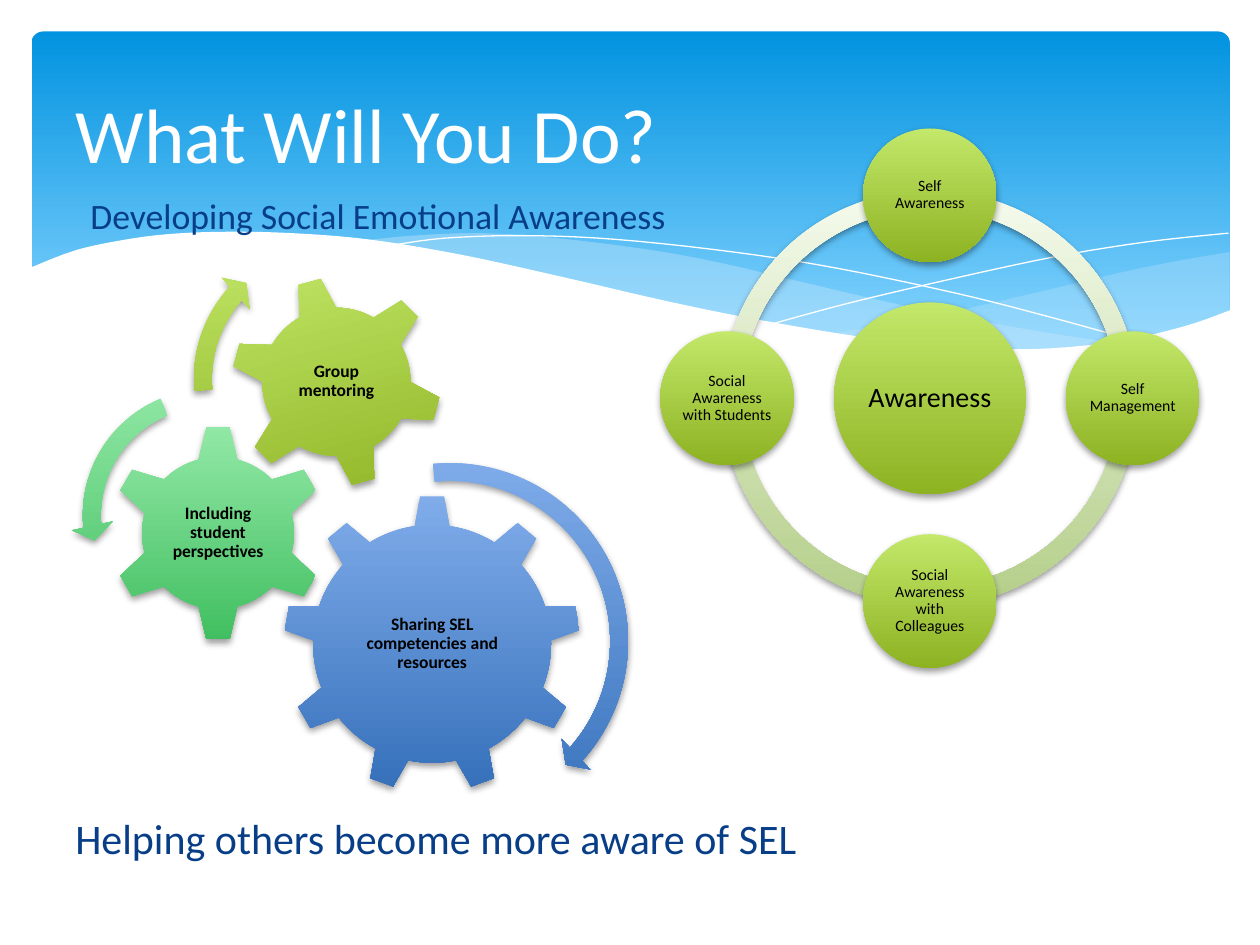
from lxml import etree
from pptx import Presentation, util as u
from pptx.dml.color import RGBColor
from pptx.enum import shapes, text
from pptx.oxml.ns import qn

COLUMNS, ROWS = 100, 75
WHITE, BLACK, NAVY, MIST = "FFFFFF", "000000", "073E87", "C6E7FC"
SKY = ("0293E0", "83D3FE")
LIME = ("C3E86A", "8DB222")
GREEN = ("92E8A6", "41BF60")
BLUE = ("80ACEA", "3570BA")
PALE = ("F5FBED", "B4CE89")
KIND = shapes.MSO_SHAPE
ALIGN = text.PP_ALIGN


def colour(value):
    return RGBColor.from_string(value)


def spline(points, steps=5):
    """Catmull-Rom curve through the points."""
    padded = [points[0], *points, points[-1]]
    curve = [points[0]]
    for a, b, c, d in zip(padded, padded[1:], padded[2:], padded[3:]):
        for step in range(1, steps + 1):
            t = step / steps
            curve.append(tuple(
                (2 * q + (r - p) * t + (2 * p - 5 * q + 4 * r - s) * t ** 2
                 + (3 * q - p - 3 * r + s) * t ** 3) / 2
                for p, q, r, s in zip(a, b, c, d)))
    return curve


class SlideBuilder:
    """Places elements on a grid of COLUMNS by ROWS."""

    def __init__(self, presentation, font="Calibri"):
        self.font = font
        self.column = presentation.slide_width / COLUMNS
        self.row = presentation.slide_height / ROWS
        self.slide = presentation.slides.add_slide(presentation.slide_layouts[3])
        self.shapes = self.slide.shapes

    def box(self, left, top, width, height):
        return [round(value * unit) for value, unit in zip(
            (left, top, width, height), (self.column, self.row) * 2)]

    def set_text(self, shape, words, size, ink=BLACK, align=ALIGN.CENTER,
                 bold=False, inset=0.01, spacing=0.9):
        frame = shape.text_frame
        frame.text = words
        margins = {f"margin_{side}": u.Inches(inset) for side in ("left", "right")}
        margins |= {f"margin_{side}": u.Inches(inset / 2) for side in ("top", "bottom")}
        paragraph = frame.paragraphs[0]
        properties = paragraph._p.get_or_add_pPr()
        properties.set("marL", "0")
        properties.set("indent", "0")
        etree.SubElement(properties, qn("a:buNone"))
        formats = (
            (frame, {"word_wrap": True, "auto_size": text.MSO_AUTO_SIZE.NONE,
                     "vertical_anchor": text.MSO_ANCHOR.MIDDLE, **margins}),
            (paragraph, {"alignment": align, "line_spacing": spacing,
                         "space_before": u.Pt(0)}),
            (paragraph.runs[0].font, {"name": self.font, "size": u.Pt(size),
                                      "bold": bold}),
        )
        for target, values in formats:
            for name, value in values.items():
                setattr(target, name, value)
        paragraph.runs[0].font.color.rgb = colour(ink)

    def placeholder(self, index, place, words, size, ink, align=ALIGN.CENTER):
        shape = self.shapes.placeholders[index]
        shape.left, shape.top, shape.width, shape.height = self.box(*place)
        self.set_text(shape, words, size, ink, align, inset=0.1, spacing=1.0)
        self.shapes._spTree.append(shape._element)  # in front of the background

    def shade(self, shape):
        effects = shape._element.spPr.find(qn("a:effectLst"))
        shadow = etree.SubElement(effects, qn("a:outerShdw"), blurRad=str(u.Pt(4)),
                                  dist=str(u.Pt(2)), dir="5400000", rotWithShape="0")
        black = etree.SubElement(shadow, qn("a:srgbClr"), val=BLACK)
        etree.SubElement(black, qn("a:alpha"), val="38000")

    def preset(self, kind, place, gradient, adjust=(), end=1.0, shadow=True, turn=0):
        shape = self.shapes.add_shape(kind, *self.box(*place))
        for index, value in enumerate(adjust):
            shape.adjustments[index] = value
        shape.rotation = turn
        shape.line.fill.background()
        shape.fill.gradient()
        shape.fill.gradient_angle = 270
        for stop, position, value in zip(shape.fill.gradient_stops, (0, end), gradient):
            stop.position = position
            stop.color.rgb = colour(value)
        shape.shadow.inherit = False
        if shadow:
            self.shade(shape)
        return shape

    def centred(self, kind, centre, size, gradient, **options):
        x, y = centre
        return self.preset(kind, (x - size / 2, y - size / 2, size, size),
                           gradient, **options)

    def label(self, centre, width, height, words):
        x, y = centre
        shape = self.shapes.add_textbox(
            *self.box(x - width / 2, y - height / 2, width, height))
        self.set_text(shape, words, 10, bold=True)

    def outline(self, points, fill=None, opacity=100):
        """Filled area, or a white hairline when there is no fill."""
        corners = [(x * self.column, y * self.row) for x, y in points]
        builder = self.shapes.build_freeform(*corners[0])
        builder.add_line_segments(corners[1:], close=bool(fill))
        shape = builder.convert_to_shape()
        shape.shadow.inherit = False
        if fill:
            shape.line.fill.background()
            shape.fill.solid()
            shape.fill.fore_color.rgb = colour(fill)
            if opacity < 100:
                tone = shape._element.spPr.find(".//" + qn("a:srgbClr"))
                etree.SubElement(tone, qn("a:alpha"), val=str(opacity * 1000))
        else:
            shape.fill.background()
            shape.line.color.rgb = colour(WHITE)
            shape.line.width = u.Pt(0)


def draw_header(page):
    page.preset(KIND.ROUNDED_RECTANGLE, (2.5, 2.5, 95.1, 27), SKY,
                adjust=[0.034], end=0.9, shadow=False)
    right_top = [(97.6, 20), (93.5, 20.7), (89.1, 21.6), (83.2, 23),
                 (75.3, 24.8), (66.1, 26.5)]
    right_bottom = [(66.1, 26.5), (71.9, 27.2), (78.1, 27.7), (83.5, 27.7),
                    (88.1, 27.3), (92.1, 26.5), (94.9, 25.7), (97.6, 24.7)]
    page.outline(spline(right_top) + spline(right_bottom), MIST, 29)
    middle_top = [(89.3, 27.3), (83.7, 26.5), (77.5, 25.4), (70.6, 24),
                  (62.9, 22.2), (56.9, 20.8), (51.4, 19.8), (44.2, 18.9),
                  (38, 18.5), (32.8, 18.7), (28.6, 19.1)]
    middle_bottom = [(28.6, 19.1), (36.2, 20.3), (44.9, 22.2), (56.6, 24.8),
                     (65, 26.4), (72.2, 27.4), (78.5, 27.8), (83.8, 27.8),
                     (89.3, 27.3)]
    page.outline(spline(middle_top) + spline(middle_bottom), MIST, 40)
    page.outline(spline([(30.9, 19.5), (35.3, 18.9), (41.6, 18.7), (48.9, 19),
                         (58.2, 20), (66.5, 21.3), (76, 23.3), (83.1, 25.1),
                         (90.7, 27.2)]))
    page.outline(spline([(61.3, 25.7), (67.2, 24.1), (74.8, 22.3), (83.6, 20.4),
                         (91, 19.2), (97.5, 18.5)]))
    page.outline(spline([(97.7, 24.6), (94, 25.9), (88.7, 27.1), (82.3, 27.7),
                         (76.1, 27.5), (68.8, 26.8), (60.3, 25.4), (52.9, 23.9),
                         (44.7, 22), (36.5, 20.2), (29.2, 19), (23, 18.5),
                         (17.7, 18.4), (13.2, 18.6), (9.5, 19.1), (5.9, 19.9),
                         (2.3, 21.3)]) + [(2.3, 32.9), (97.7, 32.9)], WHITE)


def draw_cycle(page):
    x, y, radius = 73.8, 31.6, 16.1
    half, quarter = 108, 54
    for start in (half, quarter, 0, half + quarter):
        page.centred(KIND.BLOCK_ARC, (x, y), 33, PALE,
                     adjust=[start, (start + quarter) % (2 * half), 0.046])
    hub = page.centred(KIND.OVAL, (x, y), 15.2, LIME)
    page.set_text(hub, "Awareness", 16, inset=0.02)
    for across, down, words in ((0, -1, "Self Awareness"),
                                (1, 0, "Self Management"),
                                (0, 1, "Social Awareness with Colleagues"),
                                (-1, 0, "Social Awareness with Students")):
        circle = page.centred(KIND.OVAL, (x + across * radius, y + down * radius),
                              10.6, LIME)
        page.set_text(circle, words, 9)


def draw_gears(page):
    gears = (
        (KIND.GEAR_9, (34.3, 51.1), 23.6, BLUE, 0, 14.1, 12.1,
         "Sharing SEL competencies and resources"),
        (KIND.GEAR_6, (17.3, 42.3), 17.2, GREEN, 0, 8.5, 8.5,
         "Including student perspectives"),
        (KIND.GEAR_6, (26.7, 30.3), 16.8, LIME, 345, 9.4, 9.4, "Group mentoring"),
    )
    for kind, centre, size, gradient, turn, width, height, words in gears:
        page.centred(kind, centre, size, gradient, turn=turn)
        page.label(centre, width, height, words)
    arrows = (
        (KIND.CIRCULAR_ARROW, (35.7, 50.9), 30.2, BLUE,
         [0.047, 2.99, 25.09, 158.76, 0.055]),
        (KIND.LEFT_CIRCULAR_ARROW, (16.6, 40.9), 21.9, GREEN,
         [0.065, 4.3, 104.89, 148.38, 0.075]),
        (KIND.CIRCULAR_ARROW, (26.3, 30.1), 23.7, LIME,
         [0.06, 3.94, 133.14, 105.08, 0.07]),
    )
    for kind, centre, size, gradient, adjust in arrows:
        page.centred(kind, centre, size, gradient, adjust=adjust)


def main():
    presentation = Presentation()
    presentation.slide_width, presentation.slide_height = u.Inches(10), u.Inches(7.5)
    page = SlideBuilder(presentation)
    draw_header(page)
    page.placeholder(0, (5, 3.7, 90, 13.7), "What Will You Do?", 44, WHITE, ALIGN.LEFT)
    page.placeholder(1, (5, 14.2, 50, 5.8), "Developing Social Emotional Awareness",
                     20.4, NAVY)
    draw_cycle(page)
    page.placeholder(2, (0, 62.9, 69.2, 7.1), "Helping others become more aware of SEL",
                     24, NAVY)
    draw_gears(page)
    presentation.save("out.pptx")


if __name__ == "__main__":
    main()
